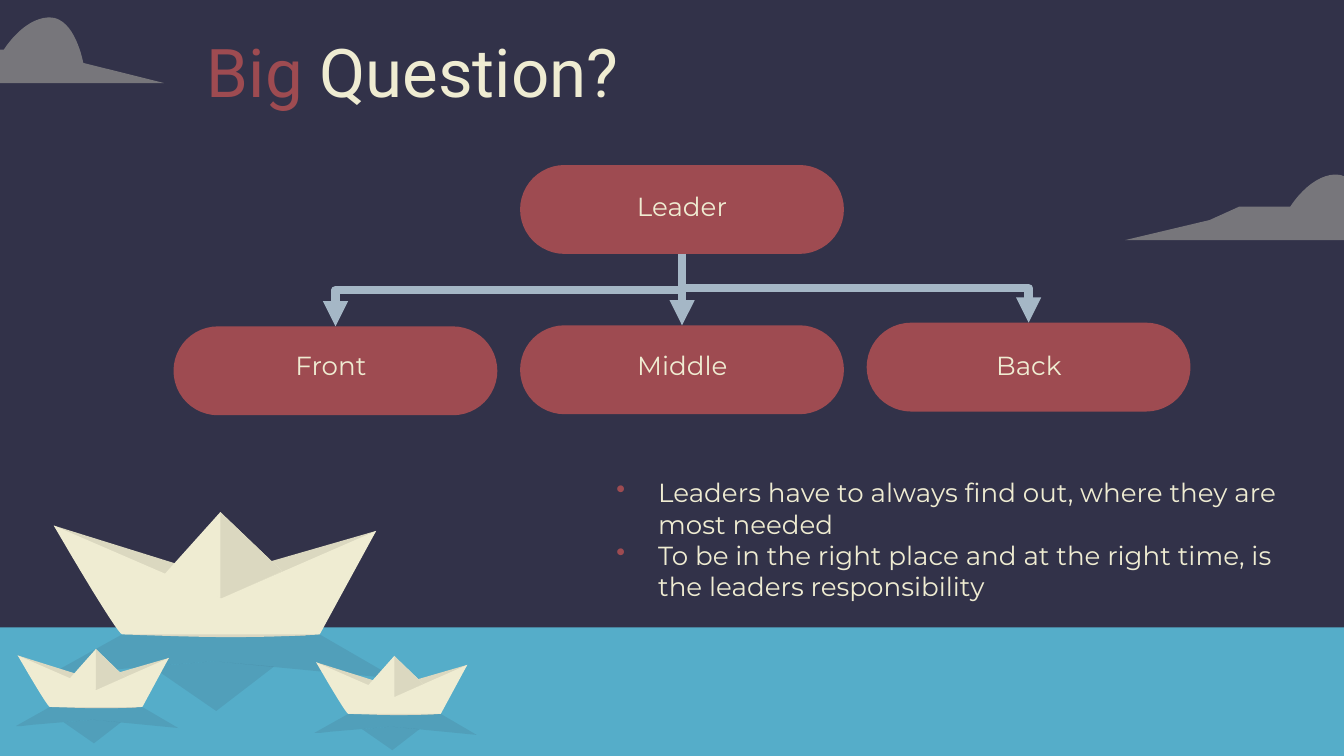
from lxml.etree import SubElement
from pptx import Presentation
from pptx.dml.color import RGBColor
from pptx.enum.shapes import MSO_CONNECTOR, MSO_SHAPE
from pptx.enum.text import MSO_ANCHOR, PP_ALIGN
from pptx.oxml.ns import qn
from pptx.util import Cm, Pt

NIGHT = RGBColor(0x32, 0x32, 0x49)
SEA = RGBColor(0x55, 0xAD, 0xC9)
CREAM = RGBColor(0xEF, 0xEC, 0xD2)
SHADE = RGBColor(0xDB, 0xD8, 0xC0)
RED = RGBColor(0x9E, 0x4B, 0x51)
STEEL = RGBColor(0xA5, 0xB7, 0xC6)

# Outlines: (x, y) is a corner, (x1, y1, x2, y2, x, y) a Bezier curve.
BOAT_GRID = (258, 148)
BOAT_PARTS = [  # colour, opacity in percent, outline
    (SHADE, 100, [(3, 10), (62, 91), (190, 92), (243, 14), (125, 48)]),
    (CREAM, 100, [(3, 10), (3, 10, 50, 91, 54, 91), (84, 92, 111, 93, 134, 93),
                  (174, 93, 201, 91, 201, 91), (243, 14), (128, 64)]),
    (CREAM, 100, [(127, 0), (83, 49), (128, 64), (173, 44)]),
    (SHADE, 100, [(127, 0), (127, 64), (128, 64), (173, 44)]),
    (NIGHT, 11, [(54, 91), (0, 121), (9, 121), (26, 119), (122, 111),
                 (258, 124), (201, 91)]),
    (NIGHT, 11, [(122, 111), (76, 115), (124, 148), (167, 115)]),
]
CLOUD_GRID = (242, 49)
CLOUD = [(156, 0), (137, 1, 123, 24, 123, 24), (85, 24), (63, 34), (0, 49),
         (242, 49), (182, 34), (182, 34, 176, 0, 157, 0)]

BOX_SIZE = (6.12, 1.68)
LEADER = ("Leader", (9.83, 3.12), (11.76, 3.48, 2.26, 0.86))
ROLES = [  # text, corner of the box, label area
    ("Middle", (9.83, 6.15), (11.79, 6.48, 2.21, 0.86)),
    ("Front", (3.28, 6.17), (5.33, 6.48, 1.85, 0.86)),
    ("Back", (16.38, 6.10), (18.57, 6.48, 1.75, 0.86)),
]


def flatten(outline, steps=16):
    """Replace each curve of an outline by short straight pieces."""
    points = []
    for part in outline:
        if len(part) == 2:
            points.append(part)
            continue
        x0, y0 = points[-1]
        x1, y1, x2, y2, x3, y3 = part
        for step in range(1, steps + 1):
            t = step / steps
            a, b, c, d = (1 - t) ** 3, 3 * t * (1 - t) ** 2, 3 * t * t * (1 - t), t ** 3
            points.append((a * x0 + b * x1 + c * x2 + d * x3,
                           a * y0 + b * y1 + c * y2 + d * y3))
    return points


def paint(shape, color, opacity=100):
    shape.shadow.inherit = False
    shape.line.fill.background()
    shape.fill.solid()
    shape.fill.fore_color.rgb = color
    if opacity < 100:
        color_element = shape._element.spPr.find(qn("a:solidFill"))[0]
        SubElement(color_element, qn("a:alpha"), val=str(opacity * 1000))


def add_outline(shapes, box, grid, outline, color, opacity):
    """Draw an outline, given on a grid, scaled to fill the box."""
    left, top, width, height = box
    points = [(Cm(left + x * width / grid[0]), Cm(top + y * height / grid[1]))
              for x, y in flatten(outline)]
    builder = shapes.build_freeform(*points[0])
    builder.add_line_segments(points[1:], close=True)
    paint(builder.convert_to_shape(), color, opacity)


def add_boat(slide, box):
    shapes = slide.shapes.add_group_shape().shapes
    for color, opacity, outline in BOAT_PARTS:
        add_outline(shapes, box, BOAT_GRID, outline, color, opacity)


def add_cloud(slide, box):
    add_outline(slide.shapes, box, CLOUD_GRID, CLOUD, CREAM, 37)


def add_sea(slide, box):
    paint(slide.shapes.add_shape(MSO_SHAPE.RECTANGLE, *map(Cm, box)), SEA)


def add_text_frame(slide, box, **settings):
    frame = slide.shapes.add_textbox(*map(Cm, box)).text_frame
    for name, value in settings.items():
        setattr(frame, name, value)
    return frame


def add_run(paragraph, text, font_name, size, color):
    run = paragraph.add_run()
    run.text = text
    for name, value in {"name": font_name, "size": Pt(size)}.items():
        setattr(run.font, name, value)
    run.font.color.rgb = color


def add_title(slide, box):
    frame = add_text_frame(slide, box, word_wrap=True,
                           vertical_anchor=MSO_ANCHOR.BOTTOM,
                           margin_top=Cm(0.25), margin_bottom=Cm(0.25))
    for text, color in (("Big ", RED), ("Question?", CREAM)):
        add_run(frame.paragraphs[0], text, "Roboto", 36, color)


def add_bullets(slide, box, texts):
    frame = add_text_frame(slide, box, word_wrap=True,
                           margin_top=Cm(0.25), margin_bottom=Cm(0.25))
    for index, text in enumerate(texts):
        paragraph = frame.add_paragraph() if index else frame.paragraphs[0]
        properties = paragraph._p.get_or_add_pPr()
        properties.set("marL", str(Cm(0.79)))
        properties.set("indent", str(-Cm(0.79)))
        bullet_color = SubElement(properties, qn("a:buClr"))
        SubElement(bullet_color, qn("a:srgbClr"), val=str(RED))
        SubElement(properties, qn("a:buChar"), char="•")
        add_run(paragraph, text, "Montserrat", 14, CREAM)


def add_box(slide, corner):
    shape = slide.shapes.add_shape(MSO_SHAPE.ROUNDED_RECTANGLE,
                                   *map(Cm, corner + BOX_SIZE))
    shape.adjustments[0] = 0.5
    paint(shape, RED)
    return shape


def add_label(slide, text, box):
    paragraph = add_text_frame(slide, box, word_wrap=False).paragraphs[0]
    paragraph.alignment = PP_ALIGN.CENTER
    add_run(paragraph, text, "Montserrat", 14, CREAM)


def add_arrow(slide, parent, child):
    """Join the bottom of parent to the top of child, bending halfway down."""
    span = child.left - parent.left
    kind = MSO_CONNECTOR.ELBOW if span else MSO_CONNECTOR.STRAIGHT
    connector = slide.shapes.add_connector(kind, 0, 0, 0, 0)
    connector.begin_connect(parent, 2)
    connector.end_connect(child, 0)
    properties = connector._element.spPr
    if span:  # an elbow leaves sideways, so it is turned to leave downwards
        drop, width = connector.height, connector.width
        middle_x = connector.left + width // 2
        middle_y = connector.top + drop // 2
        frame = {"left": middle_x - drop // 2, "top": middle_y - width // 2,
                 "width": drop, "height": width}
        for name, value in frame.items():
            setattr(connector, name, value)
        transform = properties.find(qn("a:xfrm"))
        transform.set("rot", str((270 if span > 0 else 90) * 60000))
        transform.set("flipH", "1" if span > 0 else "0")
    connector.line.color.rgb = STEEL
    connector.line.width = Pt(4.5)
    SubElement(connector.line._get_or_add_ln(), qn("a:tailEnd"), type="triangle")
    SubElement(properties, qn("a:effectLst"))


def add_chart_of_roles(slide):
    leader = add_box(slide, LEADER[1])
    roles = [add_box(slide, corner) for _, corner, _ in ROLES]
    for role in roles:
        add_arrow(slide, leader, role)
    for text, _, label_box in [LEADER, *ROLES]:
        add_label(slide, text, label_box)


def main():
    presentation = Presentation()
    presentation.slide_width, presentation.slide_height = Cm(25.4), Cm(14.29)
    slide = presentation.slides.add_slide(presentation.slide_layouts[6])
    slide.background.fill.solid()
    slide.background.fill.fore_color.rgb = NIGHT

    add_bullets(slide, (11.4, 8.76, 13.39, 2.21), [
        "Leaders have to always find out, where they are most needed",
        "To be in the right place and at the right time, is the leaders responsibility",
    ])
    add_sea(slide, (-0.03, 11.86, 25.63, 3.35))
    add_boat(slide, (0.94, 9.68, 6.55, 3.76))
    for corner in ((21.26, 3.3), (-3.05, 0.33)):
        add_cloud(slide, corner + (6.15, 1.24))
    for corner in ((0.3, 12.27), (5.94, 12.4)):
        add_boat(slide, corner + (3.07, 1.78))
    add_title(slide, (3.66, -0.1, 8.71, 2.44))
    add_chart_of_roles(slide)
    presentation.save("out.pptx")


if __name__ == "__main__":
    main()
